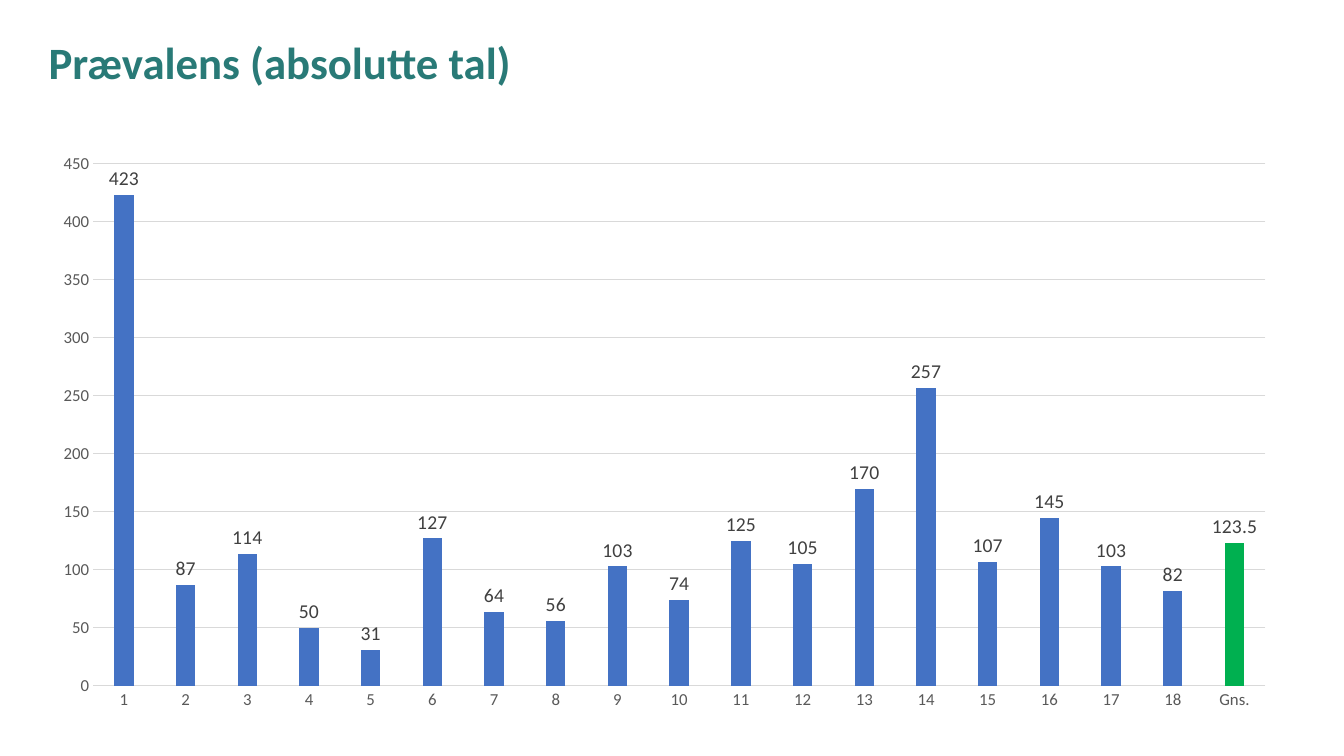
from dataclasses import dataclass

from pptx import Presentation
from pptx.chart.data import CategoryChartData
from pptx.dml.color import RGBColor
from pptx.enum.chart import XL_CHART_TYPE, XL_LABEL_POSITION, XL_TICK_MARK
from pptx.enum.text import MSO_ANCHOR, PP_ALIGN
from pptx.util import Cm, Pt

COLUMN = XL_CHART_TYPE.COLUMN_CLUSTERED
OUTSIDE = XL_LABEL_POSITION.OUTSIDE_END
NO_TICK = XL_TICK_MARK.NONE
MIDDLE = MSO_ANCHOR.MIDDLE
LEFT = PP_ALIGN.LEFT


@dataclass(frozen=True)
class Theme:
    font: str = "Calibri"
    title: str = "297A77"
    bar: str = "4472C4"
    mean: str = "00B050"
    label: str = "404040"
    axis: str = "595959"
    grid: str = "D9D9D9"
    title_size: int = 32
    label_size: int = 14
    axis_size: int = 12


THEME = Theme()
COUNTS = [423, 87, 114, 50, 31, 127, 64, 56, 103, 74,
          125, 105, 170, 257, 107, 145, 103, 82]
MEAN = 123.5


def style(font, size, color, bold=False):
    font.name = THEME.font
    font.size = Pt(size)
    font.bold = bold
    font.color.rgb = RGBColor.from_string(color)


def paint(fill, color):
    fill.solid()
    fill.fore_color.rgb = RGBColor.from_string(color)


def rule(line):
    line.width = Pt(0.75)
    paint(line.fill, THEME.grid)


def write(frame, text, *, size, color, bold=False, align=LEFT, spacing=0.9):
    frame.word_wrap = True
    frame.vertical_anchor = MIDDLE
    para = frame.paragraphs[0]
    para.alignment = align
    para.line_spacing = spacing
    run = para.add_run()
    run.text = text
    style(run.font, size, color, bold)


def add_title(slide, text):
    title = slide.shapes.title
    title.left, title.top = Cm(0.97), Cm(0.3)
    title.width, title.height = Cm(32.13), Cm(2.67)
    write(title.text_frame, text, size=THEME.title_size,
          color=THEME.title, bold=True)


def set_axis(axis):
    axis.major_tick_mark = NO_TICK
    axis.minor_tick_mark = NO_TICK
    style(axis.tick_labels.font, THEME.axis_size, THEME.axis)


def add_bars(slide):
    data = CategoryChartData()
    data.categories = [str(n) for n in range(1, len(COUNTS) + 1)] + ["Gns."]
    data.add_series("Prævalens", COUNTS + [MEAN])
    chart = slide.shapes.add_chart(
        COLUMN, Cm(0.97), Cm(3.58), Cm(31.55), Cm(14.6), data).chart
    chart.has_title = False
    chart.has_legend = False
    style(chart.font, THEME.axis_size, THEME.axis)

    set_axis(chart.category_axis)
    rule(chart.category_axis.format.line)
    scale = chart.value_axis
    set_axis(scale)
    scale.minimum_scale, scale.maximum_scale = 0, 450
    scale.major_unit = 50
    scale.format.line.fill.background()
    rule(scale.major_gridlines.format.line)

    plot = chart.plots[0]
    plot.vary_by_categories = False
    plot.gap_width, plot.overlap = 219, -27
    bars = plot.series[0]
    bars.invert_if_negative = False
    paint(bars.format.fill, THEME.bar)
    paint(bars.points[len(COUNTS)].format.fill, THEME.mean)
    labels = bars.data_labels
    labels.show_value = True
    labels.position = OUTSIDE
    style(labels.font, THEME.label_size, THEME.label)


def main():
    deck = Presentation()
    deck.slide_width, deck.slide_height = Cm(33.87), Cm(19.05)
    slide = deck.slides.add_slide(deck.slide_layouts[5])
    add_title(slide, "Prævalens (absolutte tal)")
    add_bars(slide)
    deck.save("out.pptx")


if __name__ == "__main__":
    main()
